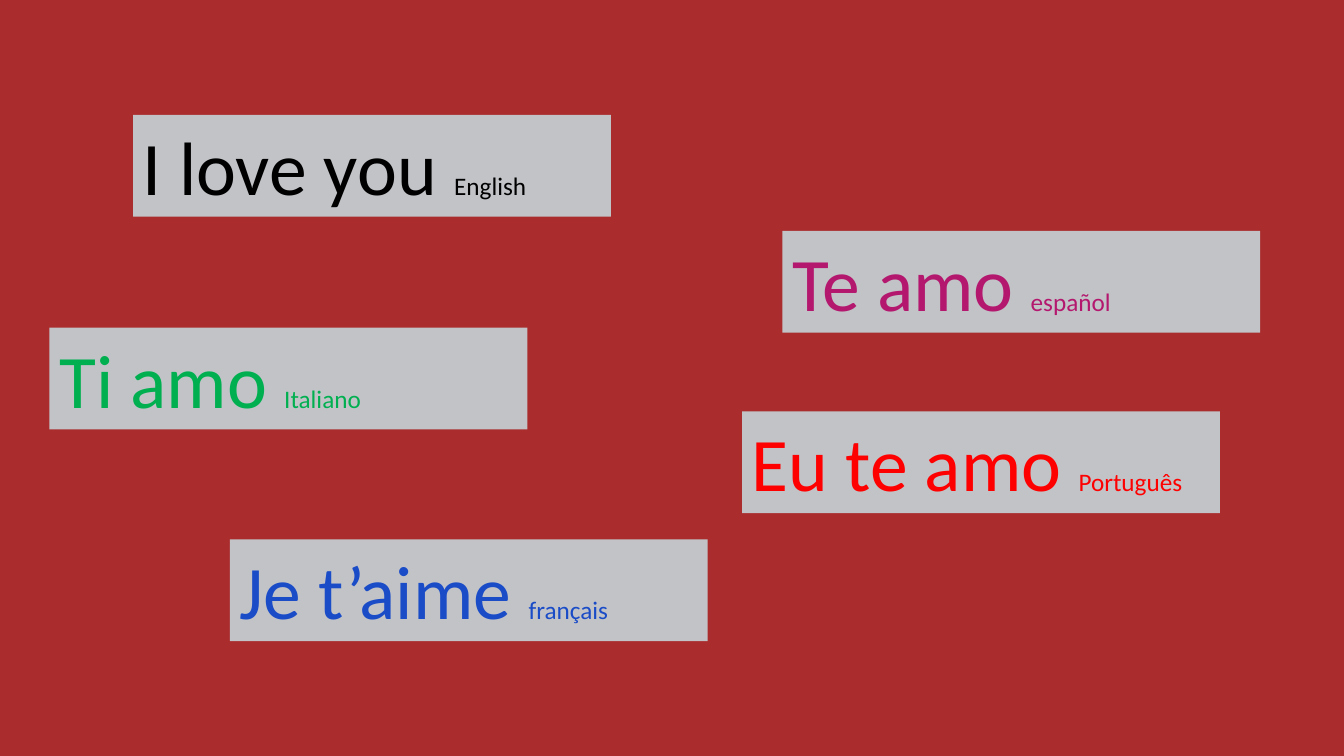
import pptx
import pptx.dml.color
import pptx.enum.text
import pptx.util

Inches = pptx.util.Inches

COLORS = {
    "background": "AA2C2C",
    "card": "C1C3C7",
    "English": "000000",
    "español": "B4186E",
    "Italiano": "00B050",
    "français": "1A4CC8",
    "Português": "FF0000",
}
# phrase, language, left, top
PHRASES = [
    ("I love you", "English", 1.32, 1.14),
    ("Te amo", "español", 7.76, 2.29),
    ("Ti amo", "Italiano", 0.49, 3.25),
    ("Je t’aime", "français", 2.28, 5.35),
    ("Eu te amo", "Português", 7.36, 4.08),
]
CARD_WIDTH, CARD_HEIGHT = 4.74, 1.01
PHRASE_SIZE, LANGUAGE_SIZE = 54, 18
FRAME_FORMAT = {
    "word_wrap": True,
    "auto_size": pptx.enum.text.MSO_AUTO_SIZE.SHAPE_TO_FIT_TEXT,
}


def paint(fill, color_name):
    fill.solid()
    fill.fore_color.rgb = pptx.dml.color.RGBColor.from_string(COLORS[color_name])


def add_run(paragraph, text, size, color_name):
    run = paragraph.add_run()
    run.text = text
    for name, value in {"name": "Calibri", "size": pptx.util.Pt(size)}.items():
        setattr(run.font, name, value)
    paint(run.font.fill, color_name)


def add_card(slide, phrase, language, left, top):
    card = slide.shapes.add_textbox(
        Inches(left), Inches(top), Inches(CARD_WIDTH), Inches(CARD_HEIGHT))
    paint(card.fill, "card")
    for name, value in FRAME_FORMAT.items():
        setattr(card.text_frame, name, value)
    paragraph = card.text_frame.paragraphs[0]
    add_run(paragraph, phrase + " ", PHRASE_SIZE, language)
    add_run(paragraph, language, LANGUAGE_SIZE, language)


def main():
    presentation = pptx.Presentation()
    presentation.slide_width = Inches(13.33)
    presentation.slide_height = Inches(7.5)
    blank_layout = presentation.slide_layouts[6]
    slide = presentation.slides.add_slide(blank_layout)
    paint(slide.background.fill, "background")
    for phrase in PHRASES:
        add_card(slide, *phrase)
    presentation.save("out.pptx")


if __name__ == "__main__":
    main()
